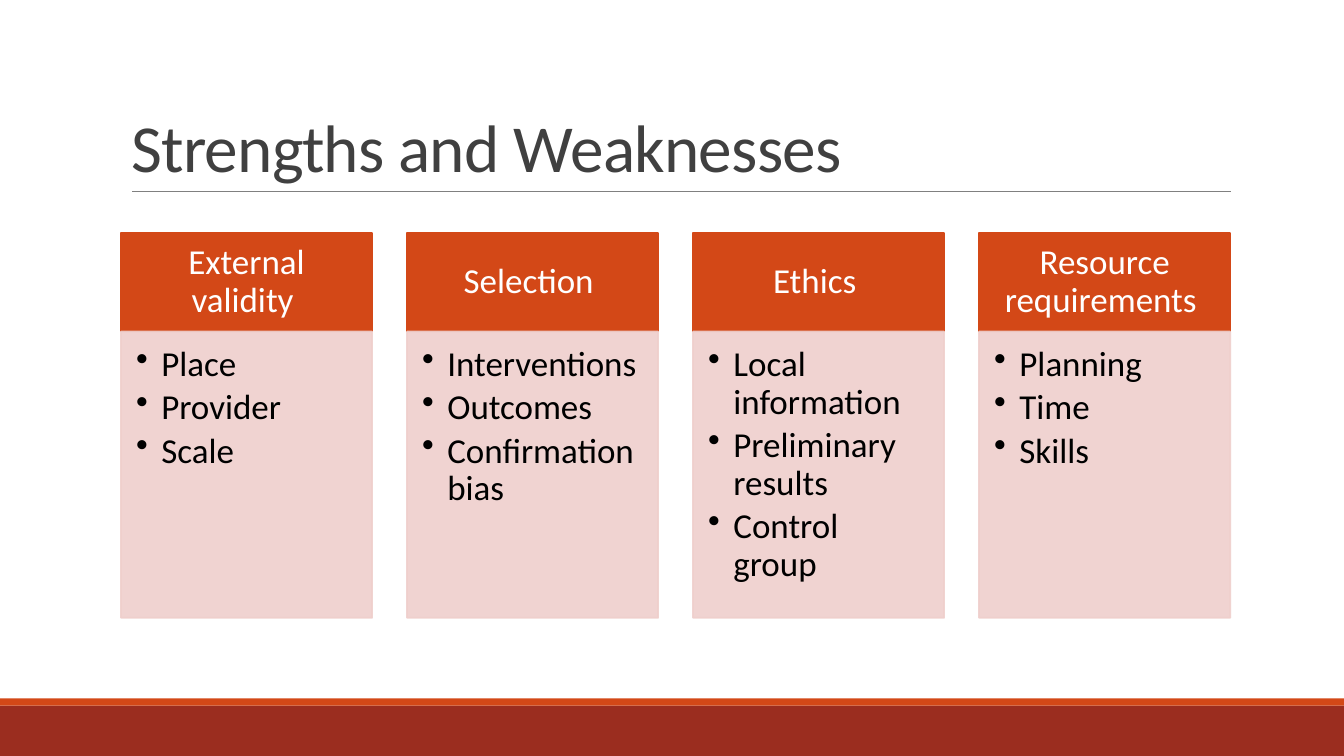
import pptx
import pptx.util
import pptx.dml.color
import pptx.enum.shapes
import pptx.enum.text
import pptx.oxml.ns
import lxml.etree
from dataclasses import dataclass

Inches = pptx.util.Inches
Pt = pptx.util.Pt

# Content
TITLE = "Strengths and Weaknesses"
COLUMNS = [
    ("External validity ", ["Place", "Provider", "Scale"]),
    ("Selection ", ["Interventions", "Outcomes", "Confirmation bias"]),
    ("Ethics ", ["Local information", "Preliminary results", "Control group"]),
    ("Resource requirements ", ["Planning", "Time", "Skills"]),
]


@dataclass(frozen=True)
class Theme:
    font: str = "Calibri"
    title_size: float = 48
    body_size: float = 25
    title_color: str = "404040"
    rule_color: str = "808080"
    accent: str = "D34817"
    footer: str = "9B2D1F"
    panel: str = "EFCFCC"
    header_text: str = "FFFFFF"
    body_text: str = "000000"
    panel_opacity: int = 90


THEME = Theme()

# Layout in inches
SLIDE_WIDTH, SLIDE_HEIGHT = 13.33, 7.5
COLUMN_LEFT, COLUMN_WIDTH, COLUMN_PITCH = 1.2, 2.49, 2.837
HEADER_TOP, HEADER_HEIGHT = 2.31, 0.98
PANEL_TOP, PANEL_HEIGHT = HEADER_TOP + HEADER_HEIGHT, 2.84
HEADER_INSETS = (0.19, 0.11, 0.19, 0.11)
PANEL_INSETS = (0.15, 0.15, 0.19, 0.22)
BULLET_INDENT = 0.25


def rgb(color):
    return pptx.dml.color.RGBColor.from_string(color)


def add_box(slide, left, top, width, height, color, outlined=False):
    shape = slide.shapes.add_shape(
        pptx.enum.shapes.MSO_SHAPE.RECTANGLE,
        Inches(left), Inches(top), Inches(width), Inches(height))
    shape.shadow.inherit = False
    shape.fill.solid()
    shape.fill.fore_color.rgb = rgb(color)
    if outlined:
        shape.line.color.rgb = rgb(color)
        shape.line.width = Pt(1.25)
    else:
        shape.line.fill.background()
    return shape


def set_opacity(shape, percent):
    for color in shape.element.spPr.iter(pptx.oxml.ns.qn("a:srgbClr")):
        alpha = lxml.etree.SubElement(color, pptx.oxml.ns.qn("a:alpha"))
        alpha.set("val", str(percent * 1000))


def set_frame(shape, insets, anchor):
    frame = shape.text_frame
    frame.word_wrap = True
    frame.vertical_anchor = anchor
    (frame.margin_left, frame.margin_top,
     frame.margin_right, frame.margin_bottom) = map(Inches, insets)
    return frame


def style_paragraph(paragraph, size, color, alignment, line_spacing):
    paragraph.alignment = alignment
    paragraph.line_spacing = line_spacing
    for run in paragraph.runs:
        run.font.name = THEME.font
        run.font.size = Pt(size)
        run.font.color.rgb = rgb(color)


def add_bullet(paragraph):
    properties = paragraph._p.get_or_add_pPr()
    properties.set("marL", str(Inches(BULLET_INDENT)))
    properties.set("indent", str(-Inches(BULLET_INDENT)))
    bullet = lxml.etree.SubElement(properties, pptx.oxml.ns.qn("a:buChar"))
    bullet.set("char", "•")


def add_title(slide):
    title = slide.shapes.title
    title.left, title.top = Inches(1.2), Inches(0.31)
    title.width, title.height = Inches(11), Inches(1.59)
    frame = set_frame(title, (0.1, 0.05, 0.1, 0.05),
                      pptx.enum.text.MSO_ANCHOR.BOTTOM)
    frame.text = TITLE
    frame.auto_size = pptx.enum.text.MSO_AUTO_SIZE.NONE
    paragraph = frame.paragraphs[0]
    style_paragraph(paragraph, THEME.title_size, THEME.title_color,
                    pptx.enum.text.PP_ALIGN.LEFT, 0.85)
    paragraph.runs[0].font._element.set("spc", "-50")


def add_title_rule(slide):
    rule = slide.shapes.add_connector(
        pptx.enum.shapes.MSO_CONNECTOR.STRAIGHT,
        Inches(1.31), Inches(1.9), Inches(12.21), Inches(1.9))
    rule.line.color.rgb = rgb(THEME.rule_color)
    rule.line.width = Pt(0.5)
    lxml.etree.SubElement(rule.element.spPr, pptx.oxml.ns.qn("a:effectLst"))


def add_column(slide, left, heading, items):
    header = add_box(slide, left, HEADER_TOP, COLUMN_WIDTH, HEADER_HEIGHT,
                     THEME.accent, outlined=True)
    frame = set_frame(header, HEADER_INSETS, pptx.enum.text.MSO_ANCHOR.MIDDLE)
    frame.text = heading
    style_paragraph(frame.paragraphs[0], THEME.body_size, THEME.header_text,
                    pptx.enum.text.PP_ALIGN.CENTER, 0.9)

    panel = add_box(slide, left, PANEL_TOP, COLUMN_WIDTH, PANEL_HEIGHT,
                    THEME.panel, outlined=True)
    set_opacity(panel, THEME.panel_opacity)
    frame = set_frame(panel, PANEL_INSETS, pptx.enum.text.MSO_ANCHOR.TOP)
    frame.text = "\n".join(items)
    for paragraph in frame.paragraphs:
        style_paragraph(paragraph, THEME.body_size, THEME.body_text,
                        pptx.enum.text.PP_ALIGN.LEFT, 0.9)
        paragraph.space_after = Pt(0.15 * THEME.body_size)
        add_bullet(paragraph)


def main():
    presentation = pptx.Presentation()
    presentation.slide_width = Inches(SLIDE_WIDTH)
    presentation.slide_height = Inches(SLIDE_HEIGHT)
    slide = presentation.slides.add_slide(presentation.slide_layouts[5])

    # Footer bands
    add_box(slide, 0, 7, SLIDE_WIDTH, 0.5, THEME.footer)
    add_box(slide, 0, 6.93, SLIDE_WIDTH, 0.07, THEME.accent)

    # Title and rule
    add_title_rule(slide)
    add_title(slide)

    # Four columns
    for index, (heading, items) in enumerate(COLUMNS):
        add_column(slide, COLUMN_LEFT + index * COLUMN_PITCH, heading, items)

    presentation.save("out.pptx")


if __name__ == "__main__":
    main()
